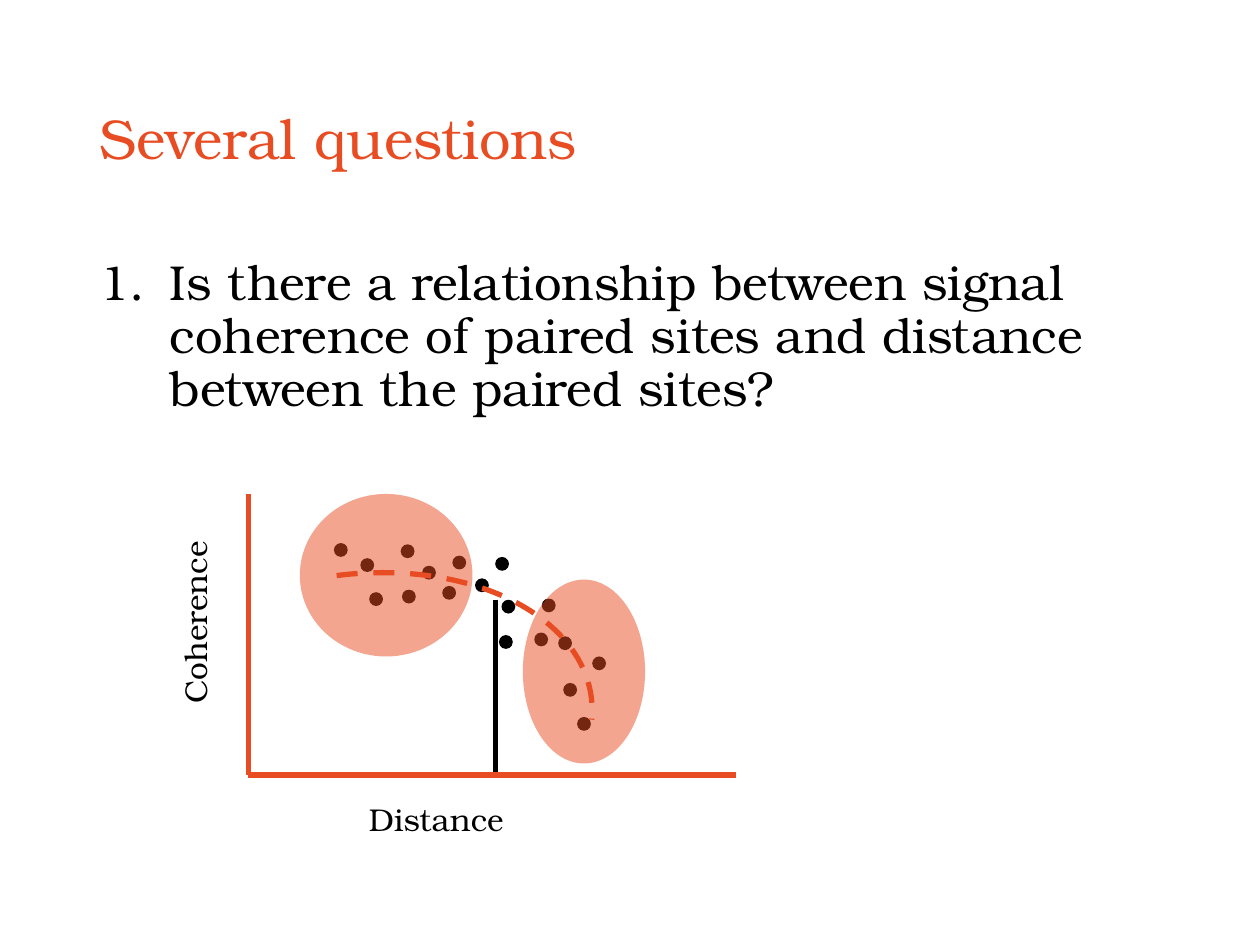
from dataclasses import dataclass

from lxml.etree import SubElement
from pptx import Presentation
from pptx.dml.color import RGBColor
from pptx.enum.dml import MSO_LINE_DASH_STYLE as Dash
from pptx.enum.shapes import MSO_CONNECTOR, MSO_SHAPE as Shape
from pptx.enum.text import MSO_ANCHOR, MSO_AUTO_SIZE, PP_ALIGN
from pptx.oxml.ns import qn
from pptx.util import Inches, Pt


@dataclass(frozen=True)
class Theme:
    font: str = "TeX Gyre Bonum"
    accent: RGBColor = RGBColor(0xE8, 0x4C, 0x22)
    ink: RGBColor = RGBColor(0, 0, 0)
    title: int = 32
    body: int = 28
    label: int = 18
    line: int = 3


THEME = Theme()

TITLE = "Several questions"
QUESTION = ("Is there a relationship between signal coherence of paired sites "
            "and distance between the paired sites?")

# The plot is a grid of 100 steps to the inch, counted from its top left corner.
PLOT_LEFT, PLOT_TOP = 1.97, 3.92
PLOT_WIDTH, PLOT_HEIGHT = 387, 223
STEPS_PER_INCH = 100
DOT_SIZE = 11

AXES = [(0, 0, 0, PLOT_HEIGHT), (PLOT_WIDTH, PLOT_HEIGHT, 0, PLOT_HEIGHT)]
THRESHOLD = (196, 84, 196, PLOT_HEIGHT)
AXIS_LABELS = [("Distance", (86, 238, 130, 40), 0),
               ("Coherence", (-130, 68, 176, 40), 270)]
SITE_PAIRS = {
    "near": [(68, 39), (89, 51), (96, 78), (121, 40), (122, 76),
             (138, 57), (154, 73), (162, 49)],
    "middle": [(180, 67), (196, 50), (199, 112), (201, 84)],
    "far": [(227, 110), (233, 83), (246, 113), (250, 150),
            (261, 177), (273, 129)],
}
TREND_BOX, TREND_ROTATION, TREND_ANGLES = (-105, 64, 379, 245), 352.3, (162.61, 3.29)
CLUSTERS = [(41, 0, 137, 129), (218, 68, 97, 146)]


def plot_x(steps):
    return Inches(PLOT_LEFT + steps / STEPS_PER_INCH)


def plot_y(steps):
    return Inches(PLOT_TOP + steps / STEPS_PER_INCH)


def plot_box(left, top, width, height):
    return (plot_x(left), plot_y(top),
            Inches(width / STEPS_PER_INCH), Inches(height / STEPS_PER_INCH))


def style_font(paragraph, size, color):
    font = paragraph.font
    font.name, font.size = THEME.font, Pt(size)
    font.color.rgb = color


def add_title(slide, text):
    title = slide.shapes.title
    title.left, title.top, title.width, title.height = map(
        Inches, (0.69, 0.4, 8.62, 1.45))
    frame = title.text_frame
    frame.text = text
    frame.vertical_anchor = MSO_ANCHOR.MIDDLE
    paragraph = frame.paragraphs[0]
    paragraph.alignment = PP_ALIGN.LEFT
    paragraph.line_spacing = 0.9
    style_font(paragraph, THEME.title, THEME.accent)


def add_numbered_question(slide, text):
    box = slide.shapes.add_textbox(*map(Inches, (0.69, 2, 8.62, 4.76)))
    box.text_frame.word_wrap = True
    paragraph = box.text_frame.paragraphs[0]
    paragraph.text = text
    properties = paragraph._p.get_or_add_pPr()
    properties.set("marL", str(Inches(0.56)))
    properties.set("indent", str(Inches(-0.56)))
    SubElement(properties, qn("a:buFont"), typeface="+mj-lt")
    SubElement(properties, qn("a:buAutoNum"), type="arabicPeriod")
    paragraph.line_spacing = 0.9
    style_font(paragraph, THEME.body, THEME.ink)


def add_line(slide, ends, color):
    x1, y1, x2, y2 = ends
    line = slide.shapes.add_connector(
        MSO_CONNECTOR.STRAIGHT, plot_x(x1), plot_y(y1), plot_x(x2), plot_y(y2))
    line.line.color.rgb = color
    line.line.width = Pt(THEME.line)
    SubElement(line._element.spPr, qn("a:effectLst"))


def add_axis_label(slide, text, box, rotation):
    label = slide.shapes.add_textbox(*plot_box(*box))
    label.rotation = rotation
    frame = label.text_frame
    frame.word_wrap = True
    frame.auto_size = MSO_AUTO_SIZE.SHAPE_TO_FIT_TEXT
    frame.text = text
    style_font(frame.paragraphs[0], THEME.label, THEME.ink)


def add_ellipse(slide, box, color, opacity=100):
    ellipse = slide.shapes.add_shape(Shape.OVAL, *plot_box(*box))
    ellipse.shadow.inherit = False
    ellipse.fill.solid()
    ellipse.fill.fore_color.rgb = color
    ellipse.line.fill.background()
    if opacity < 100:
        fill_color = ellipse._element.spPr.find(qn("a:solidFill"))[0]
        SubElement(fill_color, qn("a:alpha"), val=str(opacity * 1000))


def add_trend(slide):
    arc = slide.shapes.add_shape(Shape.ARC, *plot_box(*TREND_BOX))
    arc.rotation = TREND_ROTATION
    arc.adjustments[0], arc.adjustments[1] = TREND_ANGLES
    arc.shadow.inherit = False
    arc.fill.background()
    arc.line.color.rgb = THEME.accent
    arc.line.width = Pt(THEME.line)
    arc.line.dash_style = Dash.DASH


def main():
    presentation = Presentation()
    presentation.slide_width, presentation.slide_height = Inches(10), Inches(7.5)
    slide = presentation.slides.add_slide(
        presentation.slide_layouts.get_by_name("Title Only"))

    add_line(slide, THRESHOLD, THEME.ink)
    add_title(slide, TITLE)
    add_numbered_question(slide, QUESTION)
    for axis in AXES:
        add_line(slide, axis, THEME.accent)
    for label in AXIS_LABELS:
        add_axis_label(slide, *label)
    for dots in SITE_PAIRS.values():
        for left, top in dots:
            add_ellipse(slide, (left, top, DOT_SIZE, DOT_SIZE), THEME.ink)
    add_trend(slide)
    for cluster in CLUSTERS:
        add_ellipse(slide, cluster, THEME.accent, opacity=50)

    presentation.save("out.pptx")


if __name__ == "__main__":
    main()
